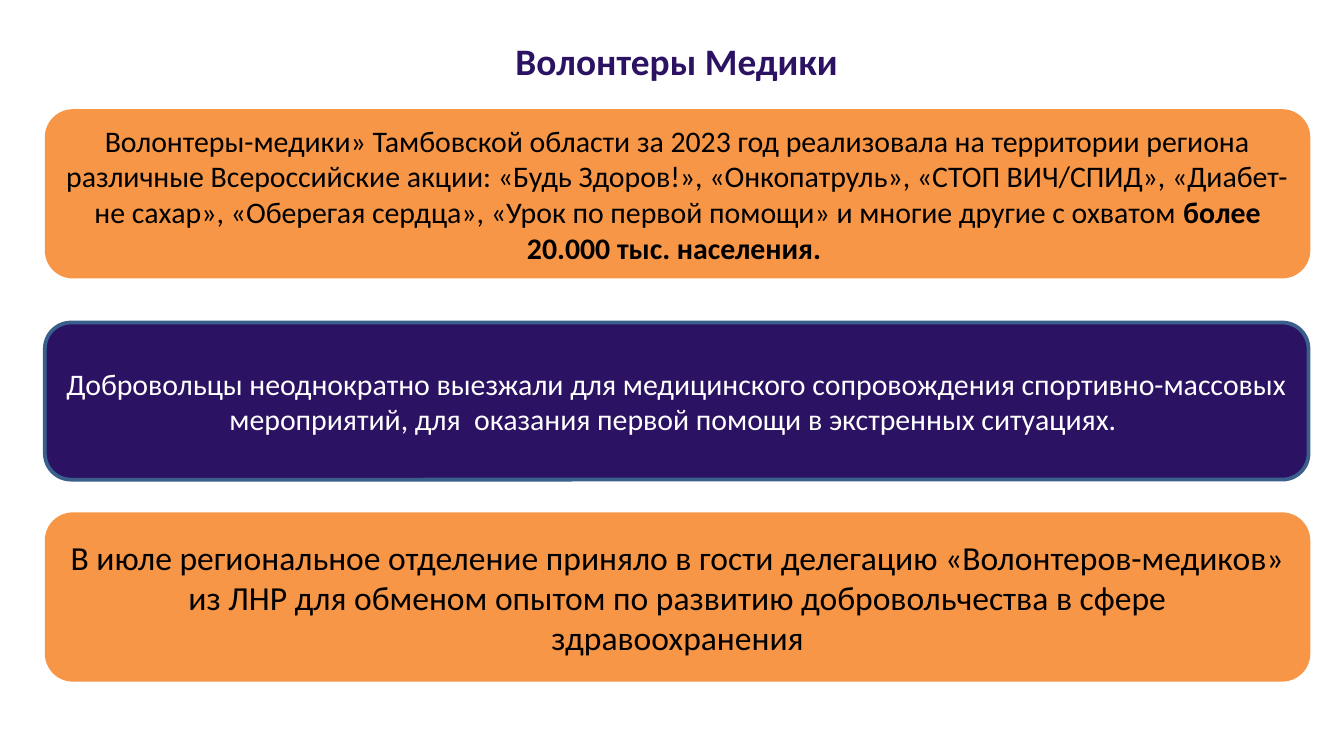
from pptx import Presentation
from pptx.dml.color import RGBColor
from pptx.enum.shapes import MSO_SHAPE as Shape
from pptx.enum.text import MSO_ANCHOR as Anchor, MSO_AUTO_SIZE as AutoSize, PP_ALIGN as Align
from pptx.util import Pt

ORANGE = RGBColor(0xF7, 0x96, 0x46)
INDIGO = RGBColor(0x2B, 0x12, 0x62)
STEEL = RGBColor(0x3A, 0x5F, 0x8C)
BLACK = RGBColor(0, 0, 0)
WHITE = RGBColor(0xFF, 0xFF, 0xFF)

CAMPAIGNS = (
    "Волонтеры-медики» Тамбовской области за 2023 год реализовала на территории региона "
    "различные Всероссийские акции: «Будь Здоров!», «Онкопатруль», «СТОП ВИЧ/СПИД», "
    "«Диабет-не сахар», «Оберегая сердца», «Урок по первой помощи» и многие другие с охватом "
)
REACH = "более 20.000 тыс. населения. "
EVENTS = (
    "Добровольцы неоднократно выезжали для медицинского сопровождения спортивно-массовых "
    "мероприятий, для  оказания первой помощи в экстренных ситуациях. "
)
DELEGATION = (
    "В июле региональное отделение приняло в гости делегацию «Волонтеров-медиков» из ЛНР "
    "для обменом опытом по развитию добровольчества в сфере здравоохранения"
)


def style_paragraph(paragraph, size, color):
    """Centre a paragraph and set its font."""
    paragraph.alignment = Align.CENTER
    paragraph.font.name = "Calibri"
    paragraph.font.size = Pt(size)
    paragraph.font.color.rgb = color


def add_heading(slide, box):
    """Place the slide heading in the given box."""
    heading = slide.shapes.add_textbox(*map(Pt, box))
    heading.text_frame.word_wrap = False
    heading.text_frame.auto_size = AutoSize.SHAPE_TO_FIT_TEXT
    paragraph = heading.text_frame.paragraphs[0]
    paragraph.text = "Волонтеры Медики"
    style_paragraph(paragraph, 20, INDIGO)
    paragraph.font.bold = True


def add_panel(slide, box, fill, color, size, message, emphasis="", outline=None):
    """Place a rounded message panel in the given box."""
    panel = slide.shapes.add_shape(Shape.ROUNDED_RECTANGLE, *map(Pt, box))
    panel.shadow.inherit = False
    panel.fill.solid()
    panel.fill.fore_color.rgb = fill
    if outline is None:
        panel.line.fill.background()
    else:
        panel.line.color.rgb = outline
        panel.line.width = Pt(2)
    frame = panel.text_frame
    frame.word_wrap = True
    frame.vertical_anchor = Anchor.MIDDLE
    paragraph = frame.paragraphs[0]
    style_paragraph(paragraph, size, color)
    paragraph.add_run().text = message
    if emphasis:
        strong = paragraph.add_run()
        strong.text = emphasis
        strong.font.bold = True


def main():
    """Build and save the slide."""
    deck = Presentation()
    deck.slide_width, deck.slide_height = Pt(720), Pt(405)
    slide = deck.slides.add_slide(deck.slide_layouts[6])
    left, width, height = 24, 678, 90.7
    add_panel(slide, (left, 58.5, width, height), ORANGE, BLACK, 16, CAMPAIGNS, REACH)
    add_heading(slide, (257, 16.8, 211, 31.5))
    add_panel(slide, (left, 172.8, 677, 84.2), INDIGO, WHITE, 16, EVENTS, outline=STEEL)
    add_panel(slide, (left, 274.5, width, height), ORANGE, BLACK, 18, DELEGATION)
    deck.save("out.pptx")


if __name__ == "__main__":
    main()
